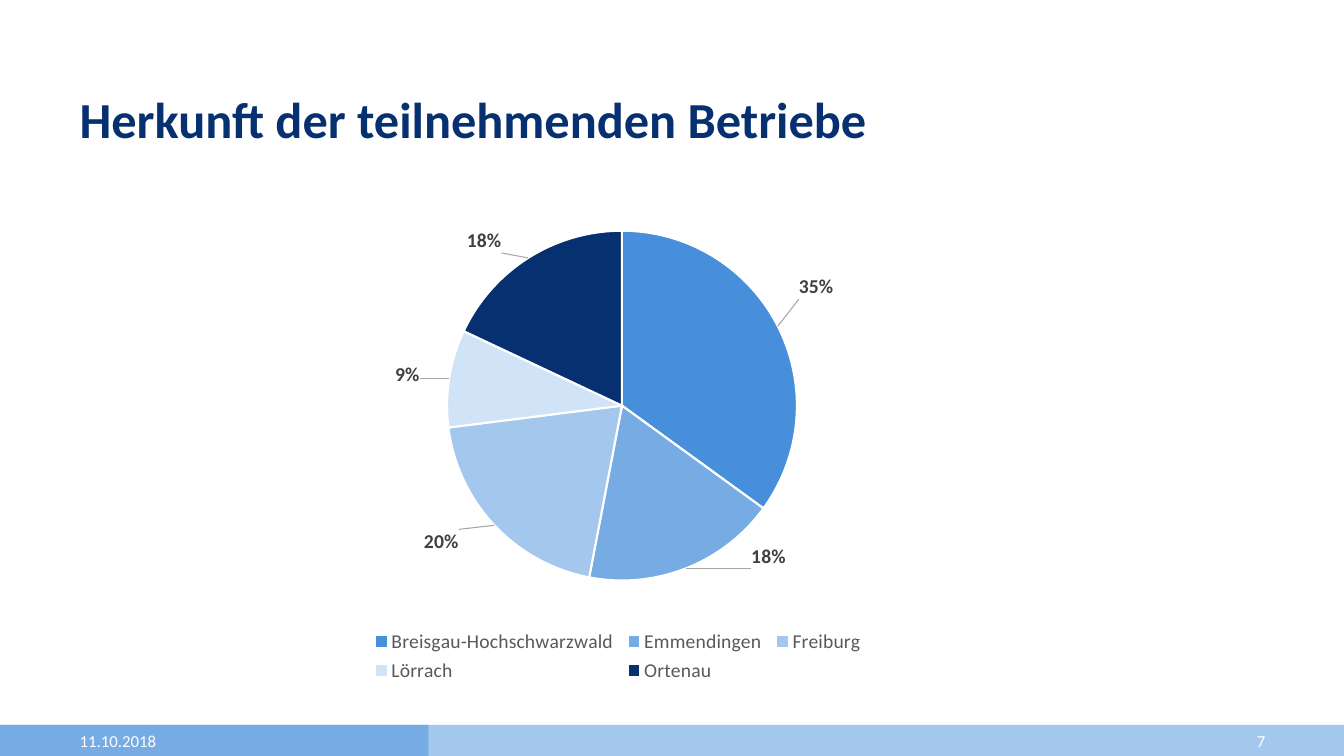
from lxml import etree
from pptx import Presentation
from pptx.chart.data import CategoryChartData
from pptx.dml.color import RGBColor
from pptx.enum.chart import XL_CHART_TYPE, XL_LABEL_POSITION, XL_LEGEND_POSITION
from pptx.enum.shapes import MSO_SHAPE
from pptx.enum.text import MSO_ANCHOR, PP_ALIGN
from pptx.oxml import parse_xml
from pptx.oxml.ns import nsdecls, qn
from pptx.util import Inches, Pt


def style_font(font, size, color, bold=False):
    font.name = "Calibri"
    font.size = Pt(size)
    font.bold = bold
    font.color.rgb = RGBColor.from_string(color)


def make_layout(**settings):
    layout = parse_xml(f"<c:layout {nsdecls('c')}><c:manualLayout/></c:layout>")
    for name, value in settings.items():
        etree.SubElement(layout[0], qn(f"c:{name}")).set("val", str(value))
    return layout


presentation = Presentation()
presentation.slide_width = Inches(13.33)
presentation.slide_height = Inches(7.5)
slide = presentation.slides.add_slide(presentation.slide_layouts[6])

# Footer bars
for width, color in [(13.33, "A3C7ED"), (4.25, "76ABE3")]:
    bar = slide.shapes.add_shape(
        MSO_SHAPE.RECTANGLE, 0, Inches(7.19), Inches(width), Inches(0.31))
    bar.shadow.inherit = False
    bar.fill.solid()
    bar.fill.fore_color.rgb = RGBColor.from_string(color)
    bar.line.fill.background()

# Title, date and slide number
texts = [
    ("Herkunft der teilnehmenden Betriebe", 0.79, 0.94, 11.76, 1.05,
     36, "073070", True, PP_ALIGN.LEFT, MSO_ANCHOR.TOP, 0.9),
    ("11.10.2018", 0.79, 7.19, 3, 0.31,
     12, "FFFFFF", False, PP_ALIGN.LEFT, MSO_ANCHOR.MIDDLE, 1.0),
    ("7", 9.55, 7.19, 3, 0.31,
     12, "FFFFFF", False, PP_ALIGN.RIGHT, MSO_ANCHOR.MIDDLE, 1.0),
]
for text, left, top, width, height, size, color, bold, align, anchor, spacing in texts:
    box = slide.shapes.add_textbox(
        Inches(left), Inches(top), Inches(width), Inches(height))
    frame = box.text_frame
    frame.word_wrap = True
    frame.vertical_anchor = anchor
    frame.margin_left = frame.margin_right = frame.margin_top = frame.margin_bottom = 0
    paragraph = frame.paragraphs[0]
    paragraph.text = text
    paragraph.alignment = align
    paragraph.line_spacing = spacing
    style_font(paragraph.font, size, color, bold)

# Districts: name, share, slice colour, label offset as a fraction of the chart
districts = [
    ("Breisgau-Hochschwarzwald", 0.35, "488FDB", 0.02, -0.05),
    ("Emmendingen", 0.18, "76ABE3", 0.08, -0.06),
    ("Freiburg", 0.2, "A3C7ED", -0.04, 0),
    ("Lörrach", 0.09, "D1E3F6", -0.03, 0.02),
    ("Ortenau", 0.18, "073070", -0.03, 0),
]
chart_data = CategoryChartData(number_format="0%")
chart_data.categories = [district[0] for district in districts]
chart_data.add_series("Series 1", [district[1] for district in districts])

# Pie chart
chart = slide.shapes.add_chart(
    XL_CHART_TYPE.PIE, Inches(2.24), Inches(2), Inches(7.78), Inches(4.82),
    chart_data).chart
style_font(chart.font, 10, "000000")
chart.has_title = False
plot = chart.plots[0]
plot.vary_by_categories = True
plot_area = chart._chartSpace.chart.plotArea
for old_layout in plot_area.findall(qn("c:layout")):
    plot_area.remove(old_layout)
plot_area.insert(0, make_layout(
    layoutTarget="inner", xMode="edge", yMode="edge", x=0.28, y=0.06, w=0.45, h=0.72))

# Legend
chart.has_legend = True
legend = chart.legend
legend.position = XL_LEGEND_POSITION.BOTTOM
legend.include_in_layout = False
style_font(legend.font, 14, "595959")
legend._element.find(qn("c:legendPos")).addnext(make_layout(
    xMode="edge", yMode="edge", x=0.18, y=0.87, w=0.64, h=0.13))

# Slices and their labels
series = plot.series[0]
labels = series.data_labels
labels.show_value = True
labels.number_format = "0%"
labels.number_format_is_linked = False
labels.position = XL_LABEL_POSITION.OUTSIDE_END
style_font(labels.font, 14, "404040", True)
for index, (name, share, color, shift_x, shift_y) in enumerate(districts):
    point = series.points[index]
    point.format.fill.solid()
    point.format.fill.fore_color.rgb = RGBColor.from_string(color)
    point.format.line.color.rgb = RGBColor.from_string("FFFFFF")
    point.format.line.width = Pt(1.5)
    label = point.data_label
    style_font(label.font, 14, "404040", True)
    label.position = XL_LABEL_POSITION.OUTSIDE_END
    label_element = labels._element.findall(qn("c:dLbl"))[index]
    label_element.insert(1, make_layout(x=shift_x, y=shift_y))
    label_element.insert(2, parse_xml(
        f'<c:numFmt {nsdecls("c")} formatCode="0%" sourceLinked="0"/>'))

# Leader lines
for old_setting in labels._element.findall(qn("c:showLeaderLines")):
    labels._element.remove(old_setting)
etree.SubElement(labels._element, qn("c:showLeaderLines")).set("val", "1")
labels._element.append(parse_xml(
    f'<c:leaderLines {nsdecls("c", "a")}><c:spPr><a:ln w="9525"><a:solidFill>'
    '<a:srgbClr val="A6A6A6"/></a:solidFill></a:ln></c:spPr></c:leaderLines>'))

presentation.save("out.pptx")
